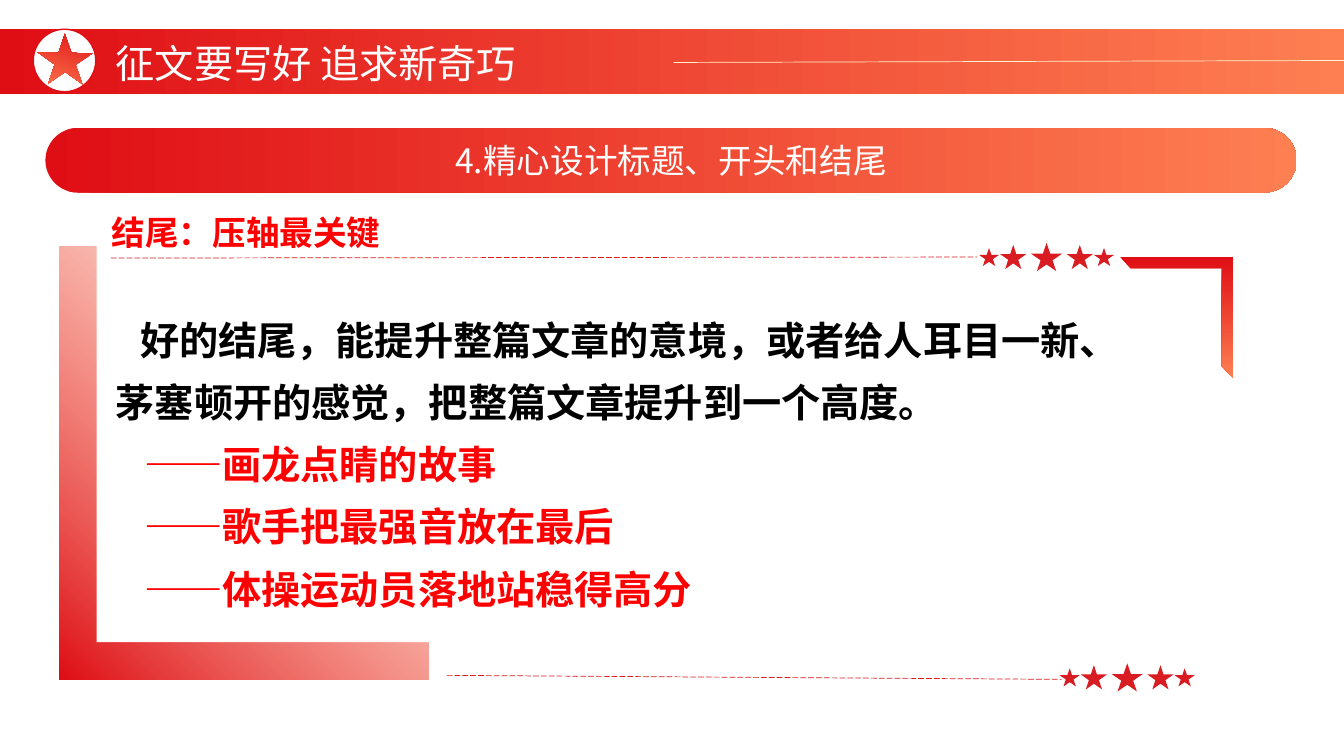
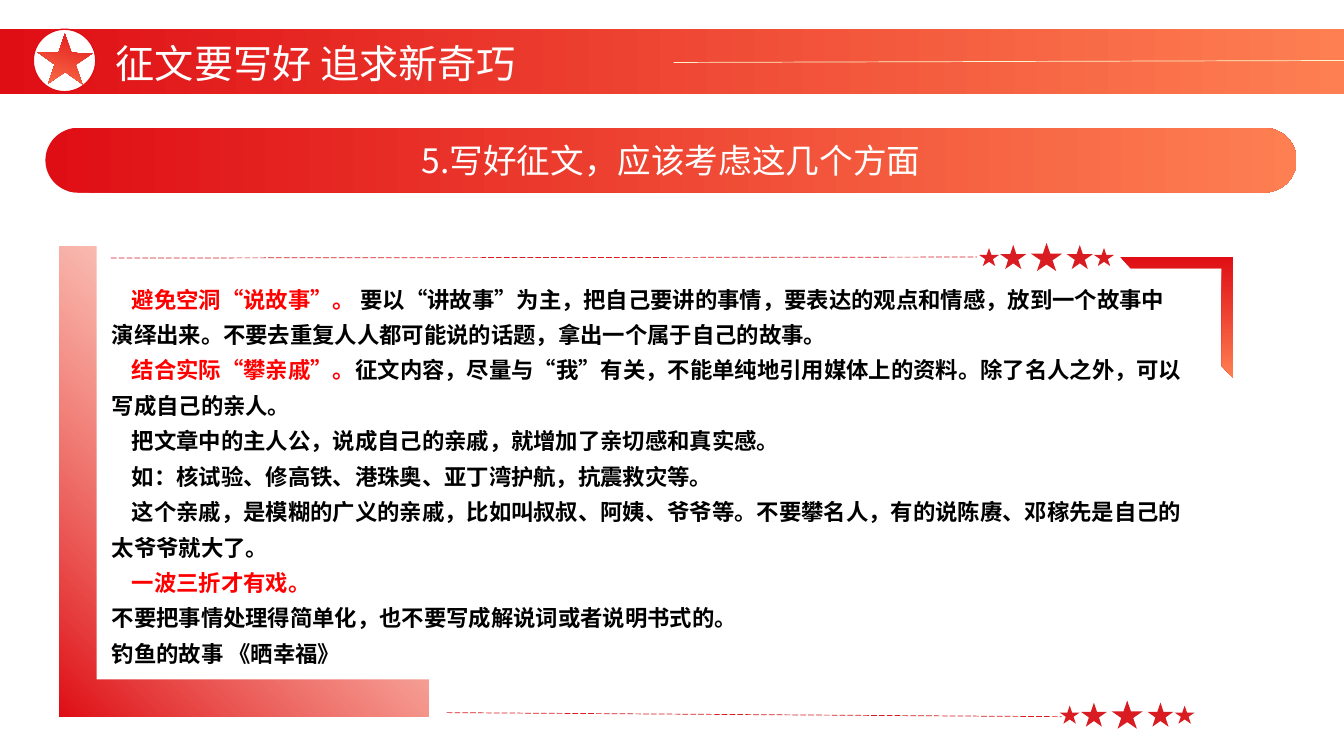
from lxml.etree import SubElement
from pptx import Presentation
from pptx.dml.color import RGBColor
from pptx.enum.dml import MSO_LINE_DASH_STYLE as Dash
from pptx.enum.shapes import MSO_CONNECTOR as Connector, MSO_SHAPE as Shape
from pptx.enum.text import MSO_ANCHOR as Anchor, PP_ALIGN as Align
from pptx.oxml.ns import qn
from pptx.util import Inches, Pt

RED = RGBColor(0xDF, 0x0E, 0x15)
ORANGE = RGBColor(0xFE, 0x7F, 0x52)
STAR_RED = RGBColor(0xD9, 0x1C, 0x21)
TEXT_RED = RGBColor(0xFF, 0x00, 0x00)
CREAM = RGBColor(0xFF, 0xF2, 0xCC)
WHITE = RGBColor(0xFF, 0xFF, 0xFF)
BLACK = RGBColor(0x00, 0x00, 0x00)
FONT = "Noto Sans CJK SC"
WIDTH, HEIGHT = 13.33, 7.5

# Content: each body paragraph is a first-line indent and its coloured runs
TITLE = "征文要写好 追求新奇巧"
SLIDES = [
    {
        "banner": "4.精心设计标题、开头和结尾",
        "heading": "结尾：压轴最关键",
        "frame_bottom": 6.74,
        "body_at": (1.05, 2.94, 10.82, 3.21),
        "size": 28,
        "body": [
            (0.24, [("好的结尾，能提升整篇文章的意境，或者给人耳目一新、", BLACK)]),
            (0, [("茅塞顿开的感觉，把整篇文章提升到一个高度。", BLACK)]),
            (0.28, [("——画龙点睛的故事", TEXT_RED)]),
            (0.28, [("——歌手把最强音放在最后", TEXT_RED)]),
            (0.28, [("——体操运动员落地站稳得高分", TEXT_RED)]),
        ],
    },
    {
        "banner": "5.写好征文，应该考虑这几个方面",
        "heading": None,
        "frame_bottom": 7.11,
        "body_at": (1.01, 2.7, 10.82, 4),
        "size": 16,
        "body": [
            (0.2, [("避免空洞“说故事”。", TEXT_RED),
                   (" 要以“讲故事”为主，把自己要讲的事情，要表达的观点和情感，放到一个故事中"
                    "演绎出来。不要去重复人人都可能说的话题，拿出一个属于自己的故事。", BLACK)]),
            (0.2, [("结合实际“攀亲戚”。", TEXT_RED),
                   ("征文内容，尽量与“我”有关，不能单纯地引用媒体上的资料。除了名人之外，"
                    "可以写成自己的亲人。", BLACK)]),
            (0.2, [("把文章中的主人公，说成自己的亲戚，就增加了亲切感和真实感。", BLACK)]),
            (0.2, [("如：核试验、修高铁、港珠奥、亚丁湾护航，抗震救灾等。", BLACK)]),
            (0.2, [("这个亲戚，是模糊的广义的亲戚，比如叫叔叔、阿姨、爷爷等。不要攀名人，"
                    "有的说陈赓、邓稼先是自己的太爷爷就大了。", BLACK)]),
            (0.2, [("一波三折才有戏。", TEXT_RED)]),
            (0, [("不要把事情处理得简单化，也不要写成解说词或者说明书式的。", BLACK)]),
            (0, [("钓鱼的故事 《晒幸福》", BLACK)]),
        ],
    },
]

# Row of stars: offset from the middle, width, height
STARS = [(-0.57, 0.2, 0.18), (-0.33, 0.26, 0.24), (0, 0.31, 0.28),
         (0.33, 0.26, 0.24), (0.57, 0.2, 0.18)]


# Drawing helpers
def add_shape(slide, kind, at, color=None, angle=0):
    """Solid shape, or a red-to-orange gradient when no colour is given."""
    shape = slide.shapes.add_shape(kind, *map(Inches, at))
    shape.shadow.inherit = False
    shape.line.fill.background()
    if color is not None:
        shape.fill.solid()
        shape.fill.fore_color.rgb = color
    else:
        shape.fill.gradient()
        shape.fill.gradient_angle = angle
        for stop, stop_color in zip(shape.fill.gradient_stops, (RED, ORANGE)):
            stop.color.rgb = stop_color
    return shape


def add_line(slide, start, end, color, dash=None):
    line = slide.shapes.add_connector(Connector.STRAIGHT, *map(Inches, start + end))
    line.line.color.rgb = color
    line.line.width = Pt(0.5)
    if dash:
        line.line.dash_style = dash
    SubElement(line._element.spPr, qn("a:effectLst"))


def set_font(paragraph, size, color, bold=False):
    font = paragraph.font
    font.name, font.size, font.bold = FONT, Pt(size), bold
    font.color.rgb = color
    SubElement(font._element, qn("a:ea")).set("typeface", FONT)


def add_text(slide, at, paragraphs, size, bold=False, spacing=None):
    frame = slide.shapes.add_textbox(*map(Inches, at)).text_frame
    frame.word_wrap = True
    for index, (indent, runs) in enumerate(paragraphs):
        paragraph = frame.add_paragraph() if index else frame.paragraphs[0]
        set_font(paragraph, size, runs[0][1], bold)
        if spacing:
            paragraph.line_spacing = spacing
        paragraph._p.get_or_add_pPr().set("indent", str(Inches(indent)))
        for text, color in runs:
            run = paragraph.add_run()
            run.text = text
            if len(runs) > 1:
                run.font.color.rgb = color


def add_star_row(slide, center_x, center_y):
    for offset, width, height in STARS:
        add_shape(slide, Shape.STAR_5_POINT,
                  (center_x + offset - width / 2, center_y - height / 2, width, height),
                  STAR_RED)


# Parts shared by the slides
def add_frame(slide, bottom):
    left, top, width, thickness = 0.59, 2.45, 3.66, 0.37
    corner = add_shape(slide, Shape.RECTANGLE, (left, top, width, bottom - top), angle=45)
    last_color = corner._element.xpath(".//a:gs[2]/a:srgbClr")[0]
    SubElement(last_color, qn("a:alpha")).set("val", "0")
    add_shape(slide, Shape.RECTANGLE,
              (left + thickness, 2.38, width, bottom - thickness - 2.38), WHITE)

    bracket = add_shape(slide, Shape.HALF_FRAME, (11.07, 2.59, 1.2, 1.12))
    bracket.rotation = 90
    bracket.adjustments[0] = bracket.adjustments[1] = 0.099

    add_line(slide, (1.1, 2.56), (9.69, 2.55), STAR_RED, Dash.LONG_DASH)
    add_star_row(slide, 10.38, 2.55)
    add_line(slide, (4.43, bottom - 0.04), (10.53, bottom), STAR_RED, Dash.LONG_DASH)
    add_star_row(slide, 11.18, bottom - 0.02)


def add_header(slide):
    add_shape(slide, Shape.RECTANGLE, (0, 0.29, WIDTH, 0.64))
    badge = add_shape(slide, Shape.OVAL, (0.33, 0.29, 0.62, 0.62), WHITE)
    badge.line.color.rgb = RED
    badge.line.width = Pt(1)
    star = add_shape(slide, Shape.STAR_5_POINT, (0.36, 0.34, 0.52, 0.52))
    star.rotation = 108.3
    star._element.spPr.xfrm.set("flipV", "1")
    add_line(slide, (6.68, 0.62), (WIDTH, 0.6), CREAM)
    add_text(slide, (1.05, 0.34, 5.64, 0.57), [(0, [(TITLE, WHITE)])], 28)


def add_banner(slide, text):
    banner = add_shape(slide, Shape.ROUNDED_RECTANGLE, (0.45, 1.27, 12.41, 0.64))
    banner.adjustments[0] = 0.5
    banner.text_frame.vertical_anchor = Anchor.MIDDLE
    paragraph = banner.text_frame.paragraphs[0]
    paragraph.text = text
    paragraph.alignment = Align.CENTER
    set_font(paragraph, 24, WHITE)


def main():
    presentation = Presentation()
    presentation.slide_width = Inches(WIDTH)
    presentation.slide_height = Inches(HEIGHT)
    for content in SLIDES:
        slide = presentation.slides.add_slide(presentation.slide_layouts[6])
        add_frame(slide, content["frame_bottom"])
        add_header(slide)
        add_banner(slide, content["banner"])
        add_text(slide, content["body_at"], content["body"], content["size"],
                 bold=True, spacing=1.32)
        if content["heading"]:
            add_text(slide, (1.01, 2.05, 3.51, 0.5),
                     [(0, [(content["heading"], TEXT_RED)])], 24, bold=True)
    presentation.save("out.pptx")


if __name__ == "__main__":
    main()
